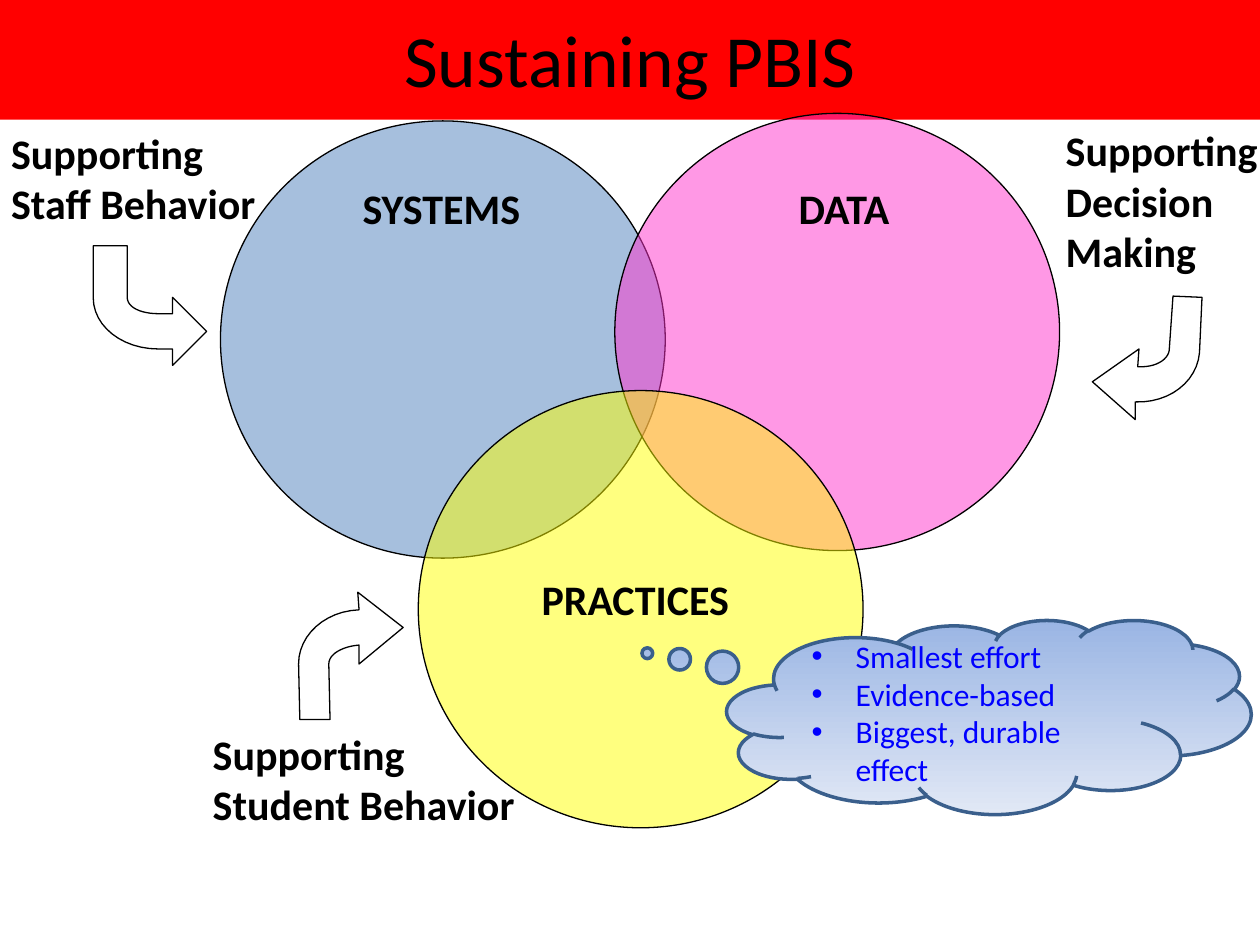
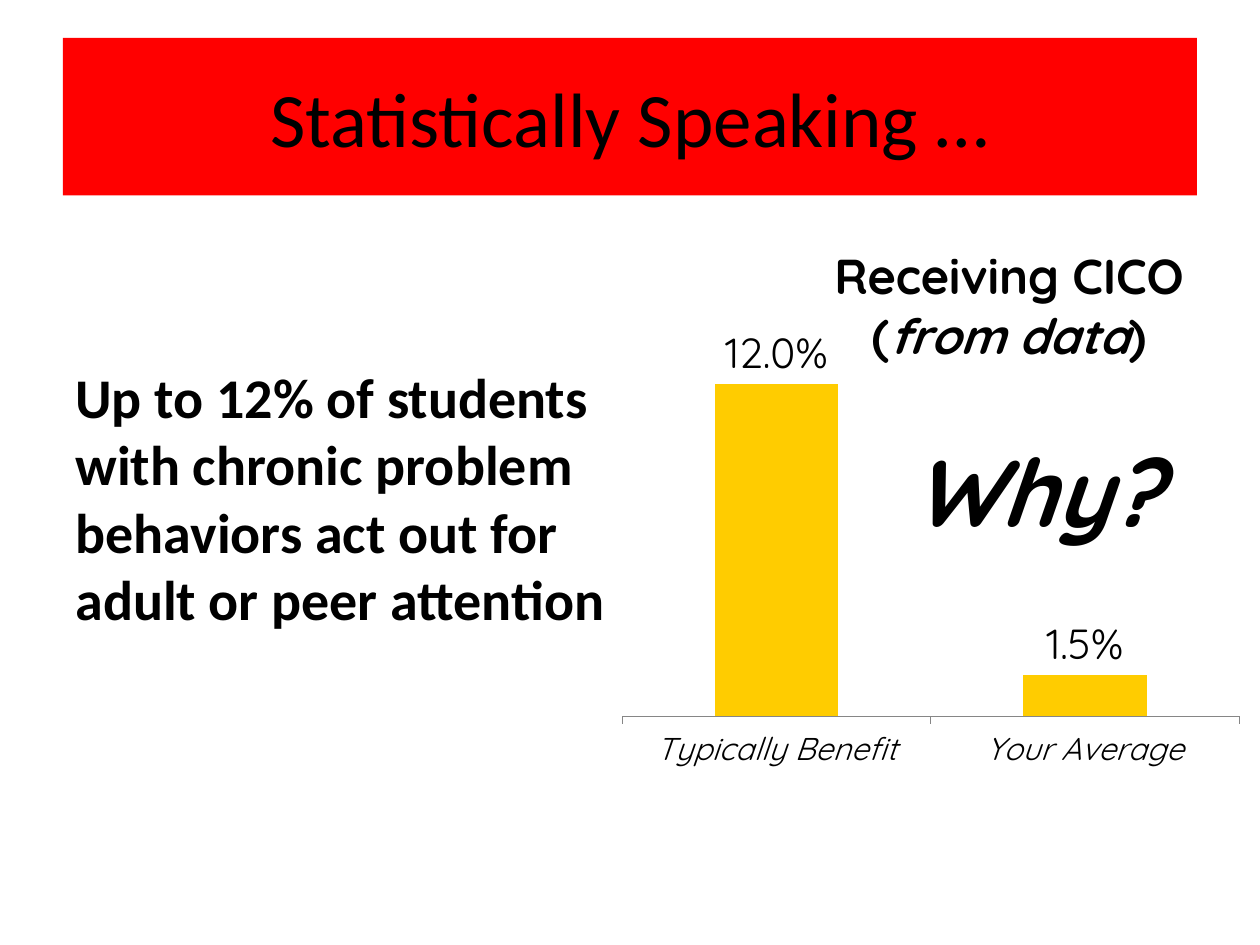
from dataclasses import dataclass

from lxml.etree import SubElement
from pptx import Presentation
from pptx.chart.data import CategoryChartData
from pptx.dml.color import RGBColor
from pptx.enum.chart import XL_CHART_TYPE, XL_LABEL_POSITION, XL_TICK_LABEL_POSITION, XL_TICK_MARK
from pptx.enum.shapes import MSO_SHAPE
from pptx.enum.text import MSO_ANCHOR, PP_ALIGN
from pptx.oxml.ns import qn
from pptx.util import Inches, Pt


@dataclass(frozen=True)
class Theme:
    font: str = "Calibri"
    chart_font: str = "Quicksand"
    ink: str = "000000"
    band: str = "FF0000"
    systems: str = "4F81BD"
    data: str = "FF33CC"
    practices: str = "FFFF00"
    cloud_top: str = "9AB5E4"
    cloud_bottom: str = "E1E8F5"
    cloud_line: str = "3A5F8C"
    cloud_text: str = "0000FF"
    bar: str = "FFCC00"
    axis: str = "868686"
    label_size: int = 24
    axis_size: int = 18
    cloud_size: int = 18
    chart_title_size: int = 28
    body_size: int = 32
    why_size: int = 54


THEME = Theme()

# Content: sustaining slide
SUSTAINING_TITLE = ("Sustaining PBIS", (0, -0.02, 10, 0.97), 42)
CIRCLE_SIZE = (3.53, 3.47)
CIRCLES = [  # left, top, colour
    (1.75, 0.96, THEME.systems),
    (4.88, 0.9, THEME.data),
    (3.32, 3.1, THEME.practices),
]
LABELS = [  # text, place
    ("SYSTEMS", (2.78, 1.4, 1.79, 0.5)),
    ("PRACTICES", (4.2, 4.5, 2.38, 0.5)),
    ("DATA", (6.24, 1.4, 1.13, 0.5)),
    ("Supporting\nStaff Behavior", (-0.01, 0.96, 2.46, 0.9)),
    ("Supporting\nDecision\nMaking", (8.36, 0.94, 2.27, 1.3)),
    ("Supporting\nStudent Behavior", (1.59, 5.73, 2.96, 0.9)),
]
# Each arrow is a list of points; six numbers are two controls and an end point
ARROWS = [
    [(1.64, 2.63), (1.37, 2.9), (1.37, 2.77), (1.26, 2.77),
     (0.97, 2.77, 0.74, 2.59, 0.74, 2.36), (0.74, 1.95), (1.01, 1.95), (1.01, 2.36),
     (1.01, 2.44, 1.12, 2.49, 1.26, 2.49), (1.37, 2.49), (1.37, 2.36)],
    [(8.67, 3.03), (9.01, 3.33), (9.01, 3.19),
     (9.28, 3.2, 9.5, 3.03, 9.52, 2.8), (9.54, 2.36), (9.31, 2.35), (9.28, 2.78),
     (9.27, 2.86, 9.16, 2.92, 9.03, 2.91), (9.04, 2.77)],
    [(3.2, 4.98), (2.84, 4.7), (2.85, 4.84),
     (2.58, 4.85, 2.37, 5.04, 2.37, 5.27), (2.38, 5.71), (2.62, 5.71), (2.61, 5.27),
     (2.61, 5.19, 2.72, 5.13, 2.85, 5.12), (2.85, 5.27)],
]
CLOUD_PLACE = (5.77, 4.92, 4.16, 1.54)
CLOUD_POINTS = ["Smallest effort", "Evidence-based", "Biggest, durable effect"]

# Content: statistics slide
STATISTICS_TITLE = ("Statistically Speaking …", (0.5, 0.3, 9, 1.25), 44)
CLAIM = ("Up to 12% of students with chronic problem behaviors act out for "
         "adult or peer attention", (0.5, 2.83, 4.75, 3.78))
WHY = ("Why?", (7.06, 3.39, 2.32, 1.01))
CHART_PLACE = (4.92, 1.81, 4.92, 4.44)
CHART_TITLE = [  # lines of (text, italic)
    [("Receiving CICO", False)],
    [("(", False), ("from data", True), (")", False)],
]
SHARES = {"Typically Benefit": 0.12, "Your Average": 0.015}


def colour(code):
    return RGBColor.from_string(code)


def inches(place):
    return [Inches(value) for value in place]


def style(font, size, code=THEME.ink, name=THEME.font, bold=False, italic=False):
    font.name, font.size, font.bold, font.italic = name, Pt(size), bold, italic
    font.color.rgb = colour(code)


def write(frame, text, size, align=PP_ALIGN.LEFT, **look):
    frame.text = text
    for para in frame.paragraphs:
        para.alignment = align
        for span in para.runs:
            style(span.font, size, **look)


def outline(shape, code=THEME.ink, width=0.75):
    shape.shadow.inherit = False
    shape.line.color.rgb = colour(code)
    shape.line.width = Pt(width)


def add_box(page, text, place, size, wrap=True, **look):
    box = page.shapes.add_textbox(*inches(place))
    box.text_frame.word_wrap = wrap
    write(box.text_frame, text, size, **look)


def add_title(page, text, place, size):
    band = page.shapes.add_shape(MSO_SHAPE.RECTANGLE, *inches(place))
    band.shadow.inherit = False
    band.fill.solid()
    band.fill.fore_color.rgb = colour(THEME.band)
    band.line.fill.background()
    band.text_frame.vertical_anchor = MSO_ANCHOR.MIDDLE
    write(band.text_frame, text, size, align=PP_ALIGN.CENTER)


def add_circle(page, left, top, code):
    circle = page.shapes.add_shape(MSO_SHAPE.OVAL, *inches((left, top, *CIRCLE_SIZE)))
    circle.fill.solid()
    circle.fill.fore_color.rgb = colour(code)
    tint = circle.element.spPr.find(".//" + qn("a:srgbClr"))
    SubElement(tint, qn("a:alpha"), val="50000")
    outline(circle)


def curve(start, bend, steps=12):
    """Points along a cubic curve from start through the controls in bend."""
    corners = [start, bend[:2], bend[2:4], bend[4:]]
    for step in range(1, steps + 1):
        t = step / steps
        weights = ((1 - t) ** 3, 3 * t * (1 - t) ** 2, 3 * t * t * (1 - t), t ** 3)
        yield tuple(sum(w * corner[axis] for w, corner in zip(weights, corners))
                    for axis in (0, 1))


def add_arrow(page, route):
    points = [route[0]]
    for part in route[1:]:
        points.extend(curve(points[-1], part) if len(part) == 6 else [part])
    builder = page.shapes.build_freeform(*inches(points[0]), scale=1.0)
    builder.add_line_segments([inches(point) for point in points[1:]], close=True)
    arrow = builder.convert_to_shape()
    arrow.fill.background()
    outline(arrow)


def add_cloud(page):
    cloud = page.shapes.add_shape(MSO_SHAPE.CLOUD_CALLOUT, *inches(CLOUD_PLACE))
    cloud.adjustments[0], cloud.adjustments[1] = -0.652, -0.328
    cloud.fill.gradient()
    cloud.fill.gradient_angle = 270
    for stop, code in zip(cloud.fill.gradient_stops, (THEME.cloud_top, THEME.cloud_bottom)):
        stop.color.rgb = colour(code)
    outline(cloud, THEME.cloud_line, 2)
    frame = cloud.text_frame
    frame.word_wrap = True
    frame.vertical_anchor = MSO_ANCHOR.MIDDLE
    write(frame, "\n".join(CLOUD_POINTS), THEME.cloud_size, code=THEME.cloud_text)
    for para in frame.paragraphs:
        settings = para._p.get_or_add_pPr()
        settings.set("marL", str(Inches(0.35)))
        settings.set("indent", str(-Inches(0.35)))
        SubElement(settings, qn("a:buFont"), typeface="Arial")
        SubElement(settings, qn("a:buChar"), char="•")


def set_layout(parent, index, **values):
    """Fix a chart part at fractions of the chart area."""
    for old in parent.findall(qn("c:layout")):
        parent.remove(old)
    layout = SubElement(parent, qn("c:layout"))
    parent.insert(index, layout)
    manual = SubElement(layout, qn("c:manualLayout"))
    for key, value in values.items():
        SubElement(manual, qn("c:" + key), val=str(value))


def add_share_chart(page):
    data = CategoryChartData(number_format="0.0%")
    data.categories = list(SHARES)
    data.add_series("Series 1", list(SHARES.values()))
    chart = page.shapes.add_chart(
        XL_CHART_TYPE.COLUMN_CLUSTERED, *inches(CHART_PLACE), data).chart
    style(chart.font, THEME.axis_size, name=THEME.chart_font)
    chart.has_legend = False

    # Chart title
    chart.has_title = True
    frame = chart.chart_title.text_frame
    for number, line in enumerate(CHART_TITLE):
        para = frame.add_paragraph() if number else frame.paragraphs[0]
        for text, italic in line:
            span = para.add_run()
            span.text = text
            style(span.font, THEME.chart_title_size, name=THEME.chart_font,
                  bold=True, italic=italic)
    set_layout(chart.chart_title.element, 1, xMode="edge", yMode="edge", x=0.34, y=0.02)
    set_layout(chart.element.find(".//" + qn("c:plotArea")), 0, layoutTarget="inner",
               xMode="edge", yMode="edge", x=0.004, y=0.18, w=0.996, h=0.693)

    # Axes
    values = chart.value_axis
    values.minimum_scale, values.maximum_scale = 0, 0.14
    values.has_major_gridlines = False
    values.visible = False
    names = chart.category_axis
    names.major_tick_mark = XL_TICK_MARK.OUTSIDE
    names.tick_label_position = XL_TICK_LABEL_POSITION.LOW
    names.format.line.color.rgb = colour(THEME.axis)
    style(names.tick_labels.font, THEME.axis_size, name=THEME.chart_font, italic=True)

    # Bars and their labels
    plot = chart.plots[0]
    plot.gap_width = 150
    plot.vary_by_categories = False
    bars = plot.series[0]
    bars.format.fill.solid()
    bars.format.fill.fore_color.rgb = colour(THEME.bar)
    labels = bars.data_labels
    labels.show_value = True
    labels.number_format = "0.0%"
    labels.number_format_is_linked = False
    labels.position = XL_LABEL_POSITION.OUTSIDE_END
    style(labels.font, THEME.label_size, name=THEME.chart_font)


def build_sustaining(page):
    add_title(page, *SUSTAINING_TITLE)
    for circle in CIRCLES:
        add_circle(page, *circle)
    for text, place in LABELS:
        add_box(page, text, place, THEME.label_size, wrap=False, bold=True)
    for route in ARROWS:
        add_arrow(page, route)
    add_cloud(page)


def build_statistics(page):
    add_title(page, *STATISTICS_TITLE)
    add_box(page, *CLAIM, THEME.body_size, bold=True)
    add_share_chart(page)
    add_box(page, *WHY, THEME.why_size, wrap=False, align=PP_ALIGN.CENTER,
            name=THEME.chart_font, bold=True, italic=True)


def main():
    deck = Presentation()
    deck.slide_width, deck.slide_height = Inches(10), Inches(7.5)
    for build in (build_sustaining, build_statistics):
        build(deck.slides.add_slide(deck.slide_layouts[6]))
    deck.save("out.pptx")


if __name__ == "__main__":
    main()
